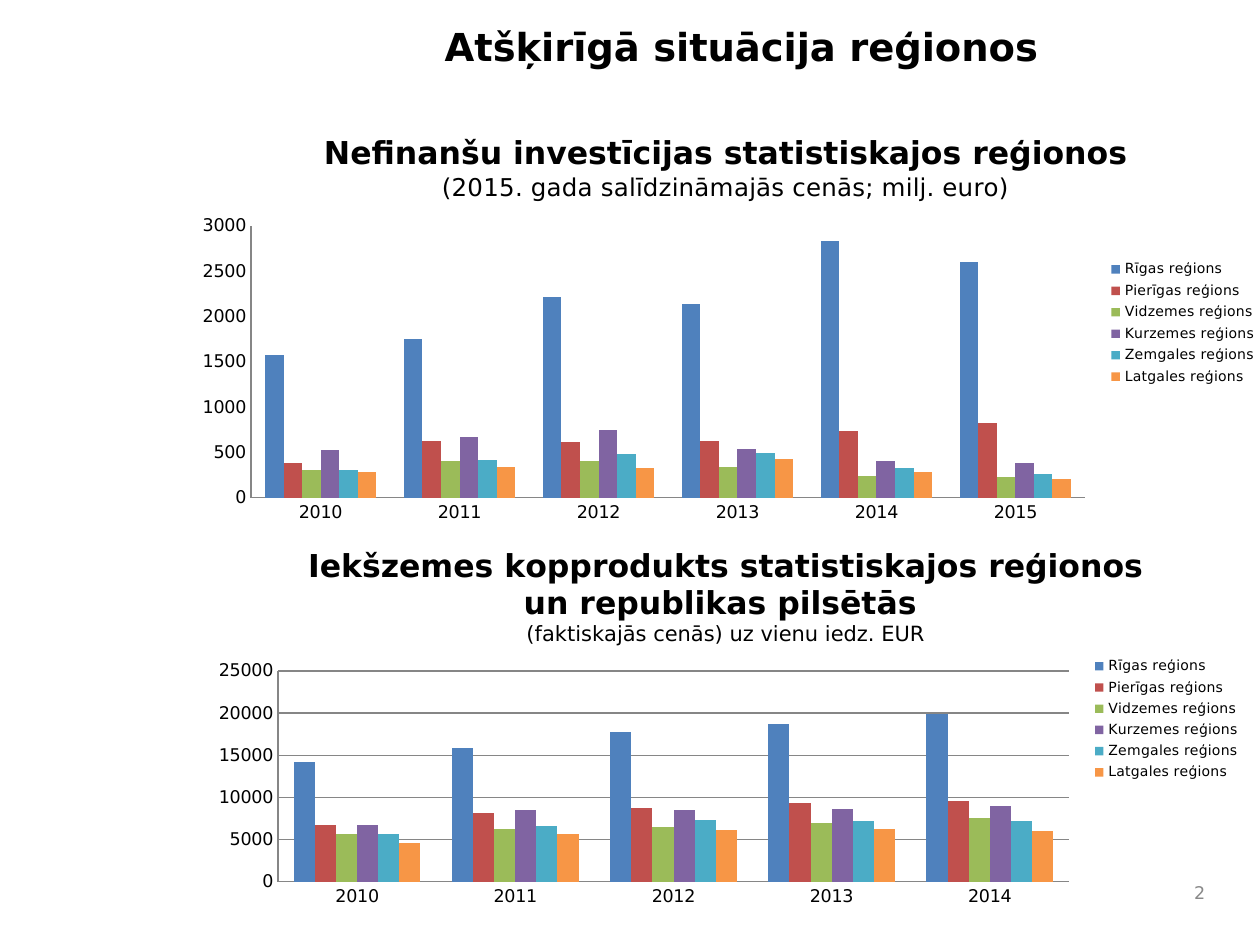
from lxml.etree import SubElement
from pptx import Presentation
from pptx.chart.data import CategoryChartData
from pptx.dml.color import RGBColor
from pptx.enum.chart import XL_CHART_TYPE, XL_LEGEND_POSITION, XL_TICK_MARK
from pptx.enum.text import MSO_ANCHOR, MSO_AUTO_SIZE, PP_ALIGN
from pptx.oxml.ns import qn
from pptx.util import Pt

FONT = "DejaVu Sans"
BLACK = RGBColor(0x00, 0x00, 0x00)
GREY = RGBColor(0x89, 0x89, 0x89)
AXIS_GREY = RGBColor(0x86, 0x86, 0x86)
REGIONS = [
    ("Rīgas reģions", RGBColor(0x4F, 0x81, 0xBD)),
    ("Pierīgas reģions", RGBColor(0xC0, 0x50, 0x4D)),
    ("Vidzemes reģions", RGBColor(0x9B, 0xBB, 0x59)),
    ("Kurzemes reģions", RGBColor(0x80, 0x64, 0xA2)),
    ("Zemgales reģions", RGBColor(0x4B, 0xAC, 0xC6)),
    ("Latgales reģions", RGBColor(0xF7, 0x96, 0x46)),
]
INVESTMENTS = [
    [1570, 1750, 2210, 2140, 2830, 2600],
    [380, 630, 620, 630, 740, 820],
    [310, 410, 410, 340, 240, 230],
    [530, 670, 750, 540, 400, 380],
    [310, 420, 480, 490, 330, 260],
    [280, 340, 330, 430, 280, 210],
]
GDP = [
    [14200, 15800, 17700, 18700, 19900],
    [6700, 8100, 8700, 9300, 9600],
    [5600, 6300, 6500, 7000, 7500],
    [6700, 8500, 8500, 8600, 9000],
    [5700, 6600, 7300, 7200, 7200],
    [4600, 5600, 6100, 6300, 6000],
]


def style_font(font, size, color=BLACK, bold=False):
    font.name = FONT
    font.size = Pt(size)
    font.bold = bold
    font.color.rgb = color


def set_layout(parent, index, box, inner=False):
    for old in parent.findall(qn("c:layout")):
        parent.remove(old)
    layout = SubElement(parent, qn("c:layout"))
    parent.insert(index, layout)
    manual = SubElement(layout, qn("c:manualLayout"))
    settings = [("layoutTarget", "inner")] if inner else []
    settings += [("xMode", "edge"), ("yMode", "edge")]
    settings += zip("xywh", box)
    for tag, value in settings:
        SubElement(manual, qn(f"c:{tag}")).set("val", str(value))


def add_title(slide, box, text):
    sp = slide.shapes.title
    sp.left, sp.top, sp.width, sp.height = map(Pt, box)
    tf = sp.text_frame
    tf.text = text
    tf.auto_size = MSO_AUTO_SIZE.NONE
    tf.vertical_anchor = MSO_ANCHOR.TOP
    p = tf.paragraphs[0]
    p.alignment = PP_ALIGN.CENTER
    style_font(p.font, 22, bold=True)


def add_page_number(slide, box, number):
    tf = slide.shapes.add_textbox(*map(Pt, box)).text_frame
    tf.word_wrap = True
    tf.vertical_anchor = MSO_ANCHOR.MIDDLE
    p = tf.paragraphs[0]
    p.text = str(number)
    p.alignment = PP_ALIGN.RIGHT
    style_font(p.font, 10, GREY)


def add_region_chart(slide, box, heading, note, note_size, rows, axis_range,
                     plot_box, legend_box, grid=False):
    data = CategoryChartData()
    data.categories = [str(2010 + i) for i in range(len(rows[0]))]
    for (name, _), values in zip(REGIONS, rows):
        data.add_series(name, values)
    chart = slide.shapes.add_chart(
        XL_CHART_TYPE.COLUMN_CLUSTERED, *map(Pt, box), data).chart
    style_font(chart.font, 10)

    tf = chart.chart_title.text_frame
    tf.text = heading
    style_font(tf.paragraphs[0].font, 18, bold=True)
    p = tf.add_paragraph()
    p.text = note
    style_font(p.font, note_size)
    chart.chart_title.include_in_layout = False

    plot = chart.plots[0]
    plot.gap_width = 150
    plot.overlap = 0
    plot.vary_by_categories = False
    for series, (_, color) in zip(plot.series, REGIONS):
        series.format.fill.solid()
        series.format.fill.fore_color.rgb = color

    for axis in (chart.category_axis, chart.value_axis):
        axis.major_tick_mark = XL_TICK_MARK.NONE
        axis.minor_tick_mark = XL_TICK_MARK.NONE
        axis.format.line.color.rgb = AXIS_GREY
        style_font(axis.tick_labels.font, 10)
    value_axis = chart.value_axis
    value_axis.minimum_scale = 0
    value_axis.maximum_scale, value_axis.major_unit = axis_range
    value_axis.has_major_gridlines = grid
    if grid:
        value_axis.major_gridlines.format.line.color.rgb = AXIS_GREY

    chart.has_legend = True
    chart.legend.position = XL_LEGEND_POSITION.RIGHT
    chart.legend.include_in_layout = False
    style_font(chart.legend.font, 8)
    root = chart.element.find(qn("c:chart"))
    set_layout(root.find(qn("c:plotArea")), 0, plot_box, inner=True)
    set_layout(root.find(qn("c:legend")), 1, legend_box)


def main():
    prs = Presentation()
    prs.slide_width, prs.slide_height = Pt(720), Pt(540)
    slide = prs.slides.add_slide(prs.slide_layouts[5])
    add_page_number(slide, (671.76, 498.24, 24, 24), 2)
    add_region_chart(
        slide, (103.68, 65.52, 622.08, 238.32),
        "Nefinanšu investīcijas statistiskajos reģionos",
        "(2015. gada salīdzināmajās cenās; milj. euro)", 14,
        INVESTMENTS, (3000, 500),
        (0.064, 0.267, 0.766, 0.652), (0.85, 0.34, 0.14, 0.32))
    add_title(slide, (151.2, 9.36, 545, 81.36), "Atšķirīgā situācija reģionos")
    add_region_chart(
        slide, (113.04, 301.68, 603.36, 221),
        "Iekšzemes kopprodukts statistiskajos reģionos un republikas pilsētās ",
        "(faktiskajās cenās) uz vienu iedz. EUR", 12,
        GDP, (25000, 5000),
        (0.076, 0.37, 0.749, 0.545), (0.845, 0.325, 0.145, 0.34), grid=True)
    prs.save("out.pptx")


if __name__ == "__main__":
    main()
